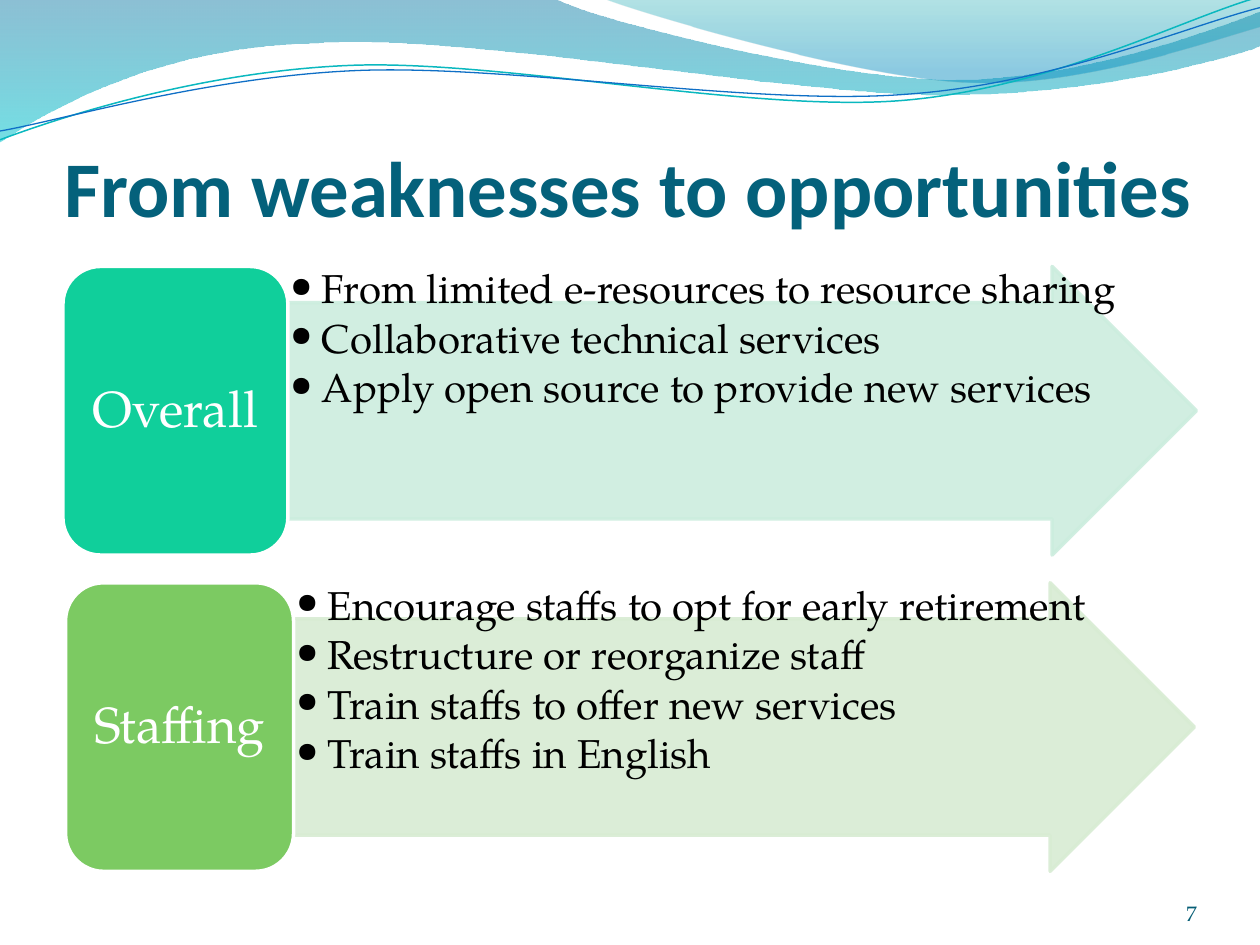
from dataclasses import dataclass
from math import cos, radians, sin

from lxml.etree import SubElement
from pptx import Presentation
from pptx.dml.color import RGBColor
from pptx.enum.shapes import MSO_SHAPE
from pptx.enum.text import MSO_ANCHOR, PP_ALIGN
from pptx.oxml.ns import qn
from pptx.util import Inches, Pt

COLUMNS, ROWS = 100, 75
CURVE_TILT = -2.7


@dataclass(frozen=True)
class Theme:
    heading_font: str = "Calibri"
    body_font: str = "TeX Gyre Pagella"
    title_size: float = 45
    label_size: float = 29
    bullet_size: float = 23
    number_size: float = 12
    title: str = "04617B"
    number: str = "045D75"
    ink: str = "000000"
    paper: str = "FFFFFF"
    teal_line: str = "0AB8BF"
    blue_line: str = "0F6FC6"
    broad_wave: tuple = ((0, "0074A1", 45), (1, "00C6CF", 55))
    right_wave: tuple = ((0, "00A1A9", 30), (0.8, "008BBF", 45))
    overall: tuple = ("10CF9B", "CCEDDE")
    staffing: tuple = ("7CCA62", "D8ECD3")


THEME = Theme()

BROAD_WAVE = [
    [(0, 0)], [(44, -0.1)],
    [(47.6, 1.7), (66.4, 6.3), (75.8, 6.3)],
    [(85.3, 6.3), (95.8, 2.6), (100, 0.9)], [(100.1, 3.6)],
    [(98.3, 4.4), (87, 7.6), (74.6, 7.5)],
    [(62.2, 7.5), (38.2, 2.8), (25.7, 3.4)],
    [(12.9, 3.6), (4.6, 8.3), (-0.1, 11.3)], [(0, 0)],
]
RIGHT_WAVE = [
    [(47.9, -0.1)],
    [(50.9, 1.1), (68.2, 6.2), (76.9, 6.5)],
    [(85.6, 6.9), (96.1, 3.2), (100, 2.1)], [(100, 0)], [(47.9, -0.1)],
]
TEAL_CURVE = [
    [(0, 11.1)],
    [(4.8, 9.3), (15.8, 5.7), (27.7, 5.2)],
    [(39.5, 4.7), (59.3, 8.9), (71.3, 8)],
    [(83.3, 7.1), (93.8, 1.5), (99.8, -0.2)],
]
BLUE_CURVE = [
    [(0, 10.4)],
    [(4.7, 9.6), (16.4, 6.1), (28.3, 5.6)],
    [(40.3, 5.1), (59.7, 8.4), (71.7, 7.5)],
    [(83.6, 6.7), (94.1, 2.1), (100, 0.6)],
]


def cells(count):
    return Inches(count * 10 / COLUMNS)


def rgb(value):
    return RGBColor.from_string(value)


def set_opacity(color, percent):
    SubElement(color, qn("a:alpha")).set("val", str(percent * 1000))


def local_point(point, box, tilt):
    left, top, width, height = box
    dx, dy = point[0] - left - width / 2, point[1] - top - height / 2
    turn = radians(-tilt)
    return (cells(width / 2 + dx * cos(turn) - dy * sin(turn)),
            cells(height / 2 + dx * sin(turn) + dy * cos(turn)))


def add_outline(slide, segments, box, close, tilt=0):
    ends = [tuple(map(cells, segment[-1])) for segment in segments]
    builder = slide.shapes.build_freeform(*ends[0])
    builder.add_line_segments(ends[1:], close=close)
    outline = builder.convert_to_shape()
    outline.shadow.inherit = False
    outline.left, outline.top, outline.width, outline.height = map(cells, box)
    outline.rotation = tilt
    track = next(outline.element.iter(qn("a:path")))
    track.set("w", str(outline.width))
    track.set("h", str(outline.height))
    for step, segment in zip(list(track), segments):
        if len(segment) == 3:
            step.tag = qn("a:cubicBezTo")
        for spot in list(step):
            step.remove(spot)
        for point in segment:
            x, y = local_point(point, box, tilt)
            spot = SubElement(step, qn("a:pt"))
            spot.set("x", str(x))
            spot.set("y", str(y))
    return outline


def add_wave(slide, segments, box, stops):
    wave = add_outline(slide, segments, box, close=True)
    wave.line.fill.background()
    wave.fill.gradient()
    wave.fill.gradient_angle = 270
    for stop, (position, color, _) in zip(wave.fill.gradient_stops, stops):
        stop.position = position
        stop.color.rgb = rgb(color)
    tints = wave.element.spPr.iter(qn("a:srgbClr"))
    for tint, (_, _, opacity) in zip(list(tints), stops):
        set_opacity(tint, opacity)


def add_curve(slide, segments, box, color, width):
    curve = add_outline(slide, segments, box, close=False, tilt=CURVE_TILT)
    curve.fill.background()
    curve.line.color.rgb = rgb(color)
    curve.line.width = Pt(width)


def add_block(slide, preset, box, fill, outline):
    block = slide.shapes.add_shape(preset, *map(cells, box))
    block.shadow.inherit = False
    block.fill.solid()
    block.fill.fore_color.rgb = rgb(fill)
    block.line.color.rgb = rgb(outline)
    block.line.width = Pt(2)
    return block


def add_text_frame(slide, box, anchor, insets=(0, 0, 0, 0)):
    frame = slide.shapes.add_textbox(*map(cells, box)).text_frame
    frame.word_wrap = True
    frame.vertical_anchor = anchor
    (frame.margin_left, frame.margin_top,
     frame.margin_right, frame.margin_bottom) = map(Inches, insets)
    return frame


def write(paragraph, words, size, color, font=THEME.body_font, bold=False,
          align=PP_ALIGN.LEFT):
    paragraph.alignment = align
    run = paragraph.add_run()
    run.text = words
    run.font.name = font
    run.font.size = Pt(size)
    run.font.bold = bold
    run.font.color.rgb = rgb(color)


def add_bullets(slide, box, points):
    frame = add_text_frame(slide, box, MSO_ANCHOR.TOP, (0.02,) * 4)
    for index, point in enumerate(points):
        paragraph = frame.add_paragraph() if index else frame.paragraphs[0]
        paragraph.level = 1
        paragraph.line_spacing = 0.9
        paragraph.space_after = Pt(0.15 * THEME.bullet_size)
        properties = paragraph._p.get_or_add_pPr()
        properties.set("marL", str(Inches(0.25)))
        properties.set("indent", str(-Inches(0.25)))
        SubElement(properties, qn("a:buFont")).set("typeface", THEME.body_font)
        SubElement(properties, qn("a:buChar")).set("char", "•")
        write(paragraph, point, THEME.bullet_size, THEME.ink)


def add_topic(slide, row, left, label_width, arrow_width, colors, label, points):
    top, height = 21.15 + 25.1 * row, 22.9
    strong, pale = colors
    arrow_box = (left + label_width, top, arrow_width, height)
    arrow = add_block(slide, MSO_SHAPE.RIGHT_ARROW, arrow_box, pale, pale)
    arrow.adjustments[0] = 0.75
    arrow.adjustments[1] = 0.5
    for tint in list(arrow.element.spPr.iter(qn("a:srgbClr"))):
        set_opacity(tint, 90)
    add_bullets(slide, arrow_box, points)
    label_box = (left, top, label_width, height)
    add_block(slide, MSO_SHAPE.ROUNDED_RECTANGLE, label_box, strong, THEME.paper)
    frame = add_text_frame(slide, label_box, MSO_ANCHOR.MIDDLE, (0.12, 0.06) * 2)
    frame.paragraphs[0].line_spacing = 0.9
    write(frame.paragraphs[0], label, THEME.label_size, THEME.paper, align=PP_ALIGN.CENTER)


def main():
    deck = Presentation()
    deck.slide_width, deck.slide_height = cells(COLUMNS), cells(ROWS)
    slide = deck.slides.add_slide(deck.slide_layouts[6])

    add_wave(slide, BROAD_WAVE, (-0.1, -0.1, 100.2, 11.4), THEME.broad_wave)
    add_wave(slide, RIGHT_WAVE, (47.9, -0.1, 52.1, 7), THEME.right_wave)
    add_curve(slide, TEAL_CURVE, (-0.2, 2.2, 100.2, 7.1), THEME.teal_line, 0.85)
    add_curve(slide, BLUE_CURVE, (-0.2, 3, 100.3, 5.8), THEME.blue_line, 0.75)

    title = add_text_frame(slide, (5.1, 6, 90, 12.5), MSO_ANCHOR.BOTTOM, (0, 0.05, 0, 0))
    write(title.paragraphs[0], "From weaknesses to opportunities", THEME.title_size,
          THEME.title, THEME.heading_font, bold=True)

    add_topic(slide, 0, 5, 17.85, 72.1, THEME.overall, "Overall", (
        "From limited e-resources to resource sharing",
        "Collaborative technical services",
        "Apply open source to provide new services"))
    add_topic(slide, 1, 5.2, 18.1, 71.5, THEME.staffing, "Staffing", (
        "Encourage staffs to opt for early retirement",
        "Restructure or reorganize staff",
        "Train staffs to offer new services",
        "Train staffs in English"))

    number = add_text_frame(slide, (86.7, 69.5, 8.3, 4), MSO_ANCHOR.BOTTOM)
    write(number.paragraphs[0], "7", THEME.number_size, THEME.number, align=PP_ALIGN.RIGHT)
    deck.save("out.pptx")


if __name__ == "__main__":
    main()
